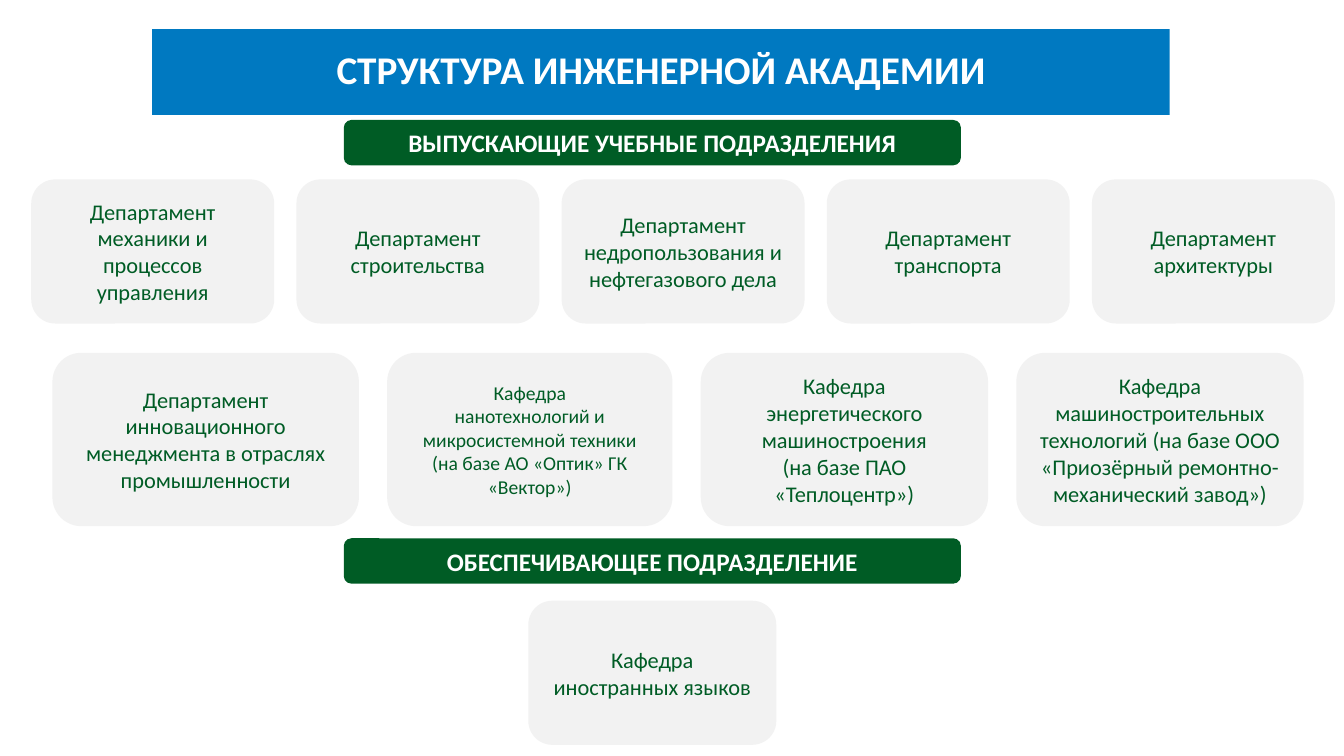
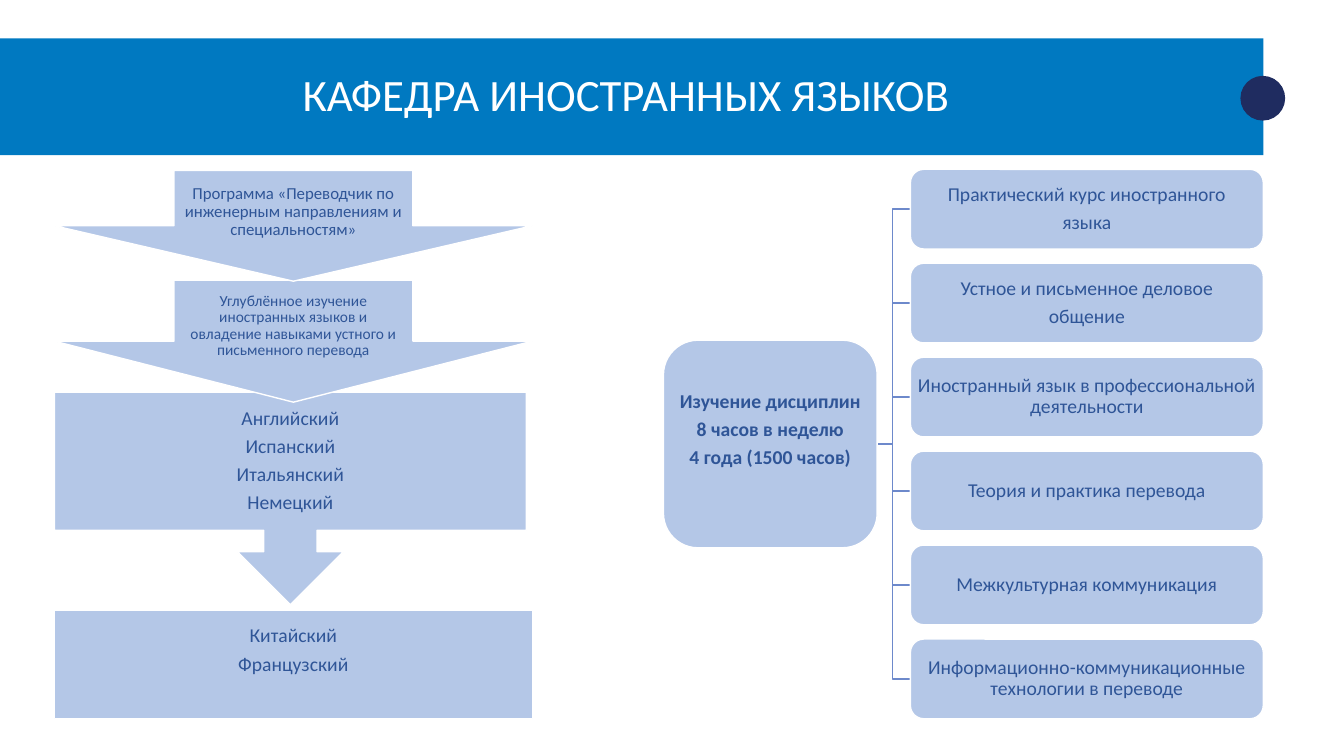
import itertools

import lxml.etree
import pptx
import pptx.dml.color
import pptx.enum.shapes
import pptx.enum.text
import pptx.oxml.ns
import pptx.util

Inches = pptx.util.Inches
Pt = pptx.util.Pt
RGBColor = pptx.dml.color.RGBColor
MSO_SHAPE = pptx.enum.shapes.MSO_SHAPE

# Shared style
FONT = "Calibri"
BLUE = RGBColor(0x00, 0x79, 0xC1)
GREEN = RGBColor(0x00, 0x5C, 0x25)
GRAY = RGBColor(0xF2, 0xF2, 0xF2)
NAVY = RGBColor(0x1F, 0x2C, 0x60)
PALE_BLUE = RGBColor(0xB4, 0xC7, 0xE7)
TEXT_BLUE = RGBColor(0x2F, 0x55, 0x97)
LINK_BLUE = RGBColor(0x6D, 0x89, 0xCB)
WHITE = RGBColor(0xFF, 0xFF, 0xFF)


def write(sp, text, size=14, color=TEXT_BLUE, bold=False, spacing=1.0,
          after=0, insets=(0.1, 0.05, 0.1, 0.05)):
    """Fill a shape with centred text, one paragraph for each line."""
    tf = sp.text_frame
    tf.word_wrap = True
    tf.auto_size = pptx.enum.text.MSO_AUTO_SIZE.NONE
    tf.vertical_anchor = pptx.enum.text.MSO_ANCHOR.MIDDLE
    tf.margin_left, tf.margin_top, tf.margin_right, tf.margin_bottom = map(Inches, insets)
    for i, line in enumerate(text.split("\n")):
        p = tf.paragraphs[0] if i == 0 else tf.add_paragraph()
        p.alignment = pptx.enum.text.PP_ALIGN.CENTER
        p.line_spacing = spacing
        p.space_before = Pt(0)
        p.space_after = Pt(after)
        r = p.add_run()
        r.text = line
        r.font.name = FONT
        r.font.size = Pt(size)
        r.font.bold = bold
        r.font.color.rgb = color


def add_block(slide, kind, box, fill, line=None):
    """Add a filled preset shape; box is left, top, width, height in inches."""
    sp = slide.shapes.add_shape(kind, *map(Inches, box))
    sp.shadow.inherit = False
    sp.fill.solid()
    sp.fill.fore_color.rgb = fill
    if line is None:
        sp.line.fill.background()
    else:
        sp.line.color.rgb = line
        sp.line.width = Pt(1)
    return sp


def add_titled_slide(prs, text, box, **style):
    """Add a slide whose title placeholder is a blue band."""
    slide = prs.slides.add_slide(prs.slide_layouts[5])
    title = slide.shapes.title
    title.left, title.top, title.width, title.height = map(Inches, box)
    title.fill.solid()
    title.fill.fore_color.rgb = BLUE
    write(title, text, color=WHITE, spacing=0.9, **style)
    return slide


# Slide 1: structure of the academy
def add_banner(slide, box, text):
    sp = add_block(slide, MSO_SHAPE.ROUNDED_RECTANGLE, box, GREEN)
    write(sp, text, size=18, color=WHITE, bold=True)


def add_unit_row(slide, left, top, height, gap, units):
    """Place units (width, text size, text) side by side with equal gaps."""
    for width, size, text in units:
        sp = add_block(slide, MSO_SHAPE.ROUNDED_RECTANGLE, (left, top, width, height), GRAY)
        write(sp, text, size=size, color=GREEN)
        left += width + gap


def build_structure_slide(prs):
    slide = add_titled_slide(prs, "СТРУКТУРА ИНЖЕНЕРНОЙ АКАДЕМИИ",
                             (1.51, 0.29, 10.09, 0.85), size=28, bold=True)
    add_banner(slide, (3.41, 1.19, 6.12, 0.45), "ВЫПУСКАЮЩИЕ УЧЕБНЫЕ ПОДРАЗДЕЛЕНИЯ")
    departments = ["механики и процессов управления", "строительства",
                   "недропользования и нефтегазового дела", "транспорта", "архитектуры"]
    add_unit_row(slide, 0.31, 1.78, 1.43, 0.22,
                 [(2.41, 16, "Департамент\n" + name) for name in departments])
    add_unit_row(slide, 0.52, 3.5, 1.72, 0.28, [
        (3.04, 16, "Департамент\nинновационного менеджмента в отраслях промышленности"),
        (2.83, 14, "Кафедра\nнанотехнологий и микросистемной техники\n"
                   "(на базе АО «Оптик» ГК «Вектор»)"),
        (2.85, 16, "Кафедра\nэнергетического машиностроения\n(на базе ПАО «Теплоцентр»)"),
        (2.85, 16, "Кафедра машиностроительных технологий (на базе ООО "
                   "«Приозёрный ремонтно-механический завод»)"),
    ])
    add_banner(slide, (3.41, 5.34, 6.12, 0.45), "ОБЕСПЕЧИВАЮЩЕЕ ПОДРАЗДЕЛЕНИЕ")
    add_unit_row(slide, 5.24, 5.96, 1.43, 0, [(2.46, 16, "Кафедра\nиностранных языков")])


# Slide 2: department of foreign languages
def add_pale_block(slide, kind, box, text, **style):
    sp = add_block(slide, kind, box, PALE_BLUE, WHITE)
    write(sp, text, spacing=0.9, after=5, **style)


def add_program_flow(slide, left, top):
    """Column of arrows and language lists, drawn from the bottom up."""
    pad = (0.11, 0.11, 0.11, 0.11)
    arrow_pad = (0.09, 0.09, 0.09, 0.09)
    steps = [
        (MSO_SHAPE.RECTANGLE, 4.37, 4.74, 1.07, 14, (0.11, 0.11, 0.11, 0.39),
         "Китайский\nФранцузский"),
        (MSO_SHAPE.DOWN_ARROW_CALLOUT, 2.2, 4.68, 2.11, 14, pad,
         "Английский\nИспанский\nИтальянский\nНемецкий"),
        (MSO_SHAPE.DOWN_ARROW, 1.09, 4.74, 1.21, 11, arrow_pad,
         "Углублённое изучение иностранных языков и овладение навыками "
         "устного и письменного перевода"),
        (MSO_SHAPE.DOWN_ARROW, 0, 4.74, 1.1, 12, arrow_pad,
         "Программа «Переводчик по инженерным направлениям и специальностям»"),
    ]
    for kind, offset, width, height, size, insets, text in steps:
        add_pale_block(slide, kind, (left, top + offset, width, height), text,
                       size=size, insets=insets)


def add_link(slide, start, end):
    sp = slide.shapes.add_connector(pptx.enum.shapes.MSO_CONNECTOR.ELBOW,
                                    *map(Inches, itertools.chain(start, end)))
    sp.line.color.rgb = LINK_BLUE
    sp.line.width = Pt(1)
    lxml.etree.SubElement(sp._element.spPr, pptx.oxml.ns.qn("a:effectLst"))


def add_discipline_tree(slide, left, top, height):
    """Hub on the left, linked to an even column of disciplines."""
    disciplines = [
        "Практический курс иностранного\nязыка",
        "Устное и письменное деловое\nобщение",
        "Иностранный язык в профессиональной деятельности",
        "Теория и практика перевода",
        "Межкультурная коммуникация",
        "Информационно-коммуникационные технологии в переводе",
    ]
    item_left, item_width, item_height = left + 2.45, 3.5, 0.79
    pitch = (height - item_height) / (len(disciplines) - 1)
    mid = top + height / 2
    tight = (0.01, 0.01, 0.01, 0.01)
    tops = [top + i * pitch for i in range(len(disciplines))]
    for y in tops:
        add_link(slide, (left + 2.09, mid), (item_left, y + item_height / 2))
    add_pale_block(slide, MSO_SHAPE.ROUNDED_RECTANGLE, (left, mid - 1.03, 2.12, 2.06),
                   "Изучение дисциплин\n8 часов в неделю\n4 года (1500 часов)",
                   bold=True, insets=(0.01, 0.01, 0.01, 0.29))
    for y, text in zip(tops, disciplines):
        add_pale_block(slide, MSO_SHAPE.ROUNDED_RECTANGLE,
                       (item_left, y, item_width, item_height), text, insets=tight)


def build_languages_slide(prs):
    slide = add_titled_slide(prs, "КАФЕДРА ИНОСТРАННЫХ ЯЗЫКОВ", (0, 0.38, 12.53, 1.16),
                             size=32, insets=(0.1, 0.05, 0.21, 0.05))
    add_block(slide, MSO_SHAPE.OVAL, (12.31, 0.76, 0.43, 0.43), NAVY, NAVY)
    add_program_flow(slide, 0.54, 1.69)
    add_discipline_tree(slide, 6.58, 1.68, 5.45)


def main():
    prs = pptx.Presentation()
    prs.slide_width, prs.slide_height = Inches(13.33), Inches(7.5)
    build_structure_slide(prs)
    build_languages_slide(prs)
    prs.save("out.pptx")


if __name__ == "__main__":
    main()
